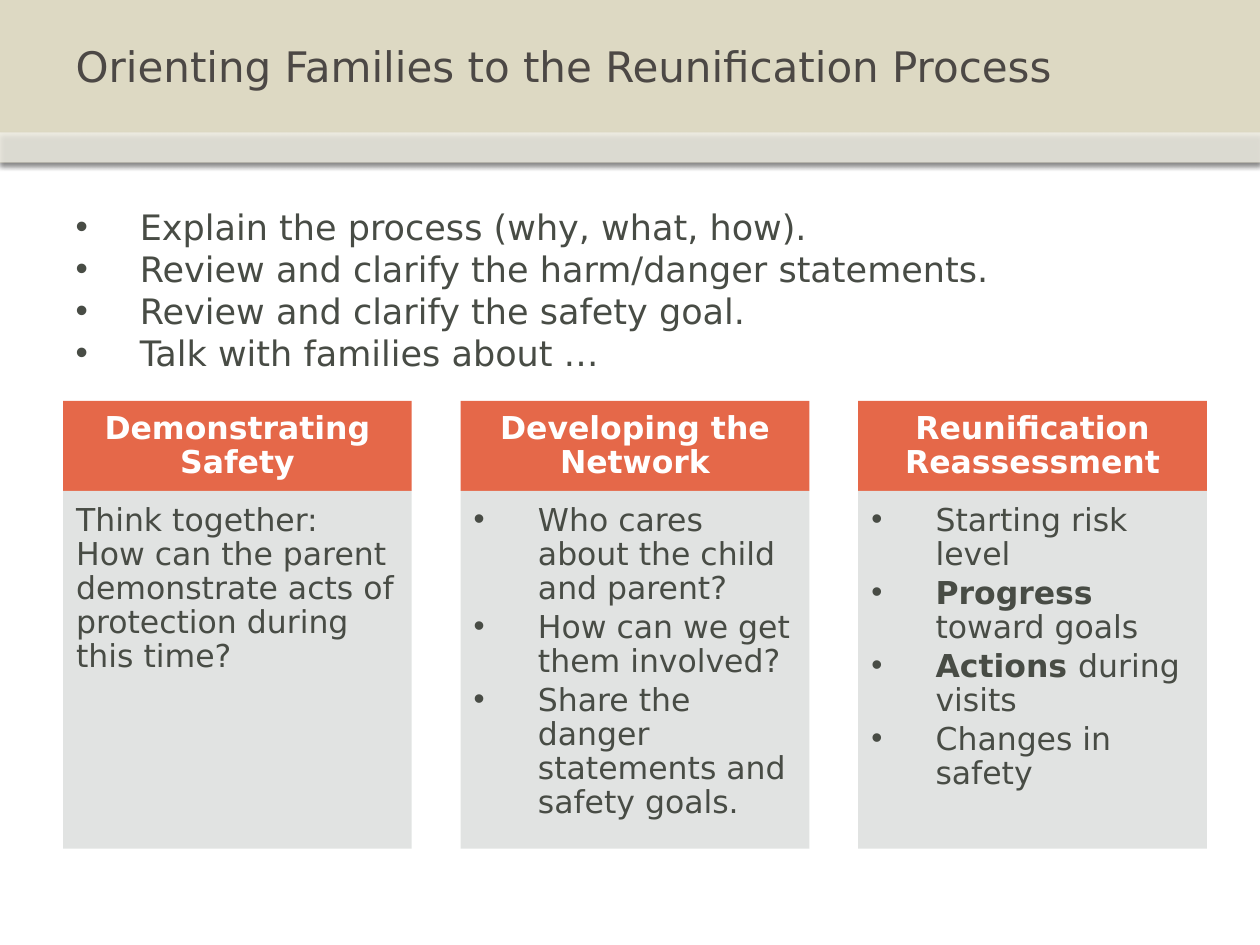
from dataclasses import dataclass

from lxml import etree
from pptx import Presentation
from pptx.dml.color import RGBColor
from pptx.enum.shapes import MSO_SHAPE
from pptx.enum.text import MSO_ANCHOR, MSO_AUTO_SIZE, PP_ALIGN
from pptx.oxml.ns import qn
from pptx.util import Pt

RECTANGLE = MSO_SHAPE.RECTANGLE
TOP, MIDDLE = MSO_ANCHOR.TOP, MSO_ANCHOR.MIDDLE
LEFT, CENTER = PP_ALIGN.LEFT, PP_ALIGN.CENTER
NO_AUTOFIT = MSO_AUTO_SIZE.NONE


@dataclass(frozen=True)
class Theme:
    font: str = "DejaVu Sans"
    banner: str = "DDD9C3"
    strip: str = "FFFFFF"
    shadow: str = "000000"
    title: str = "4C4845"
    text: str = "484C45"
    heading: str = "FFFFFF"
    heading_fill: str = "E56849"
    card_fill: str = "DEE1DF"
    title_size: int = 24
    list_size: int = 20
    card_size: int = 18


THEME = Theme()
HANGING = 36.72

STEPS = [
    "Explain the process (why, what, how).",
    "Review and clarify the harm/danger statements.",
    "Review and clarify the safety goal.",
    "Talk with families about …",
]

TOPICS = [
    ("Demonstrating Safety", False, [
        "Think together: How can the parent demonstrate acts of protection during this time?",
    ]),
    ("Developing the Network", True, [
        "Who cares about the child and parent?",
        "How can we get them involved?",
        "Share the danger statements and safety goals.",
    ]),
    ("Reunification Reassessment", True, [
        "Starting risk level",
        [("Progress ", True), ("toward goals", False)],
        [("Actions ", True), ("during visits", False)],
        "Changes in safety",
    ]),
]


def set_indent(paragraph, bulleted):
    properties = paragraph._p.get_or_add_pPr()
    hanging = Pt(HANGING) if bulleted else 0
    properties.set("marL", str(hanging))
    properties.set("indent", str(-hanging))
    if bulleted:
        etree.SubElement(properties, qn("a:buFont")).set("typeface", "Arial")
        etree.SubElement(properties, qn("a:buChar")).set("char", "•")
    else:
        etree.SubElement(properties, qn("a:buNone"))


def write(frame, paragraphs, size, color, bold=False, align=LEFT, anchor=TOP,
          insets=(7.2, 3.6, 7.2, 3.6), bulleted=False, line_spacing=1.0, space_after=0):
    frame.word_wrap = True
    frame.auto_size = NO_AUTOFIT
    frame.vertical_anchor = anchor
    frame.margin_left, frame.margin_top, frame.margin_right, frame.margin_bottom = map(Pt, insets)
    for index, content in enumerate(paragraphs):
        paragraph = frame.add_paragraph() if index else frame.paragraphs[0]
        set_indent(paragraph, bulleted)
        paragraph.alignment = align
        paragraph.line_spacing = line_spacing
        paragraph.space_before = Pt(0)
        paragraph.space_after = Pt(space_after)
        pieces = [(content, bold)] if isinstance(content, str) else content
        for words, strong in pieces:
            run = paragraph.add_run()
            run.text = words
            run.font.name = THEME.font
            run.font.size = Pt(size)
            run.font.bold = strong
            run.font.color.rgb = RGBColor.from_string(color)


def place(shape, box):
    shape.left, shape.top, shape.width, shape.height = map(Pt, box)


def add_panel(shapes, box, fill, opacity=100):
    panel = shapes.add_shape(RECTANGLE, *map(Pt, box))
    panel.shadow.inherit = False
    panel.fill.solid()
    panel.fill.fore_color.rgb = RGBColor.from_string(fill)
    panel.line.fill.background()
    if opacity < 100:
        color = panel._element.spPr.find(qn("a:solidFill")).find(qn("a:srgbClr"))
        etree.SubElement(color, qn("a:alpha")).set("val", str(opacity * 1000))
    return panel


def cast_shadow(panel):
    effects = panel._element.spPr.find(qn("a:effectLst"))
    shadow = etree.SubElement(effects, qn("a:outerShdw"), blurRad=str(Pt(3.1)),
                              dist=str(Pt(1.8)), dir="5400000", rotWithShape="0")
    color = etree.SubElement(shadow, qn("a:srgbClr"), val=THEME.shadow)
    etree.SubElement(color, qn("a:alpha")).set("val", "35000")


def build_banner(slide, box):
    left, top, width, height = box
    strip_height = 17.28
    title_height = height - strip_height
    banner = add_panel(slide.shapes, box, THEME.banner)
    strip = add_panel(slide.shapes, (left, top + title_height, width, strip_height),
                      THEME.strip, opacity=53)
    title = slide.shapes.title
    for panel in (banner, strip):
        cast_shadow(panel)
        title._element.addprevious(panel._element)
    place(title, (left + 36, top, 671.76, title_height))
    write(title.text_frame, ["Orienting Families to the Reunification Process"],
          THEME.title_size, THEME.title, anchor=MIDDLE)


def build_steps(slide, box):
    steps = slide.placeholders[1]
    place(steps, box)
    write(steps.text_frame, STEPS, THEME.list_size, THEME.text, bulleted=True)


def build_card(shapes, box, heading, bulleted, points):
    left, top, width, height = box
    heading_height = 51.5
    header = add_panel(shapes, (left, top, width, heading_height), THEME.heading_fill)
    write(header.text_frame, [heading], THEME.card_size, THEME.heading, bold=True,
          align=CENTER, anchor=MIDDLE, insets=(10, 5.76, 10, 5.76), line_spacing=0.9)
    body = add_panel(shapes, (left, top + heading_height, width, height - heading_height),
                     THEME.card_fill, opacity=90)
    write(body.text_frame, points, THEME.card_size, THEME.text, bulleted=bulleted,
          insets=(7.5, 7.5, 10, 11.5), line_spacing=0.9, space_after=2.8)


def build_topics(slide, box):
    left, top, width, height = box
    card_width = 199.3
    pitch = (width - card_width) / (len(TOPICS) - 1)
    group = slide.shapes.add_group_shape()
    for index, topic in enumerate(TOPICS):
        build_card(group.shapes, (left + index * pitch, top, card_width, height), *topic)


def main():
    deck = Presentation()
    deck.slide_width, deck.slide_height = Pt(720), Pt(540)
    slide = deck.slides.add_slide(deck.slide_layouts[1])
    build_banner(slide, (0, 0, 720, 92.88))
    build_steps(slide, (36, 113.76, 660, 392.4))
    build_topics(slide, (36, 229, 653.7, 256))
    deck.save("out.pptx")


if __name__ == "__main__":
    main()
